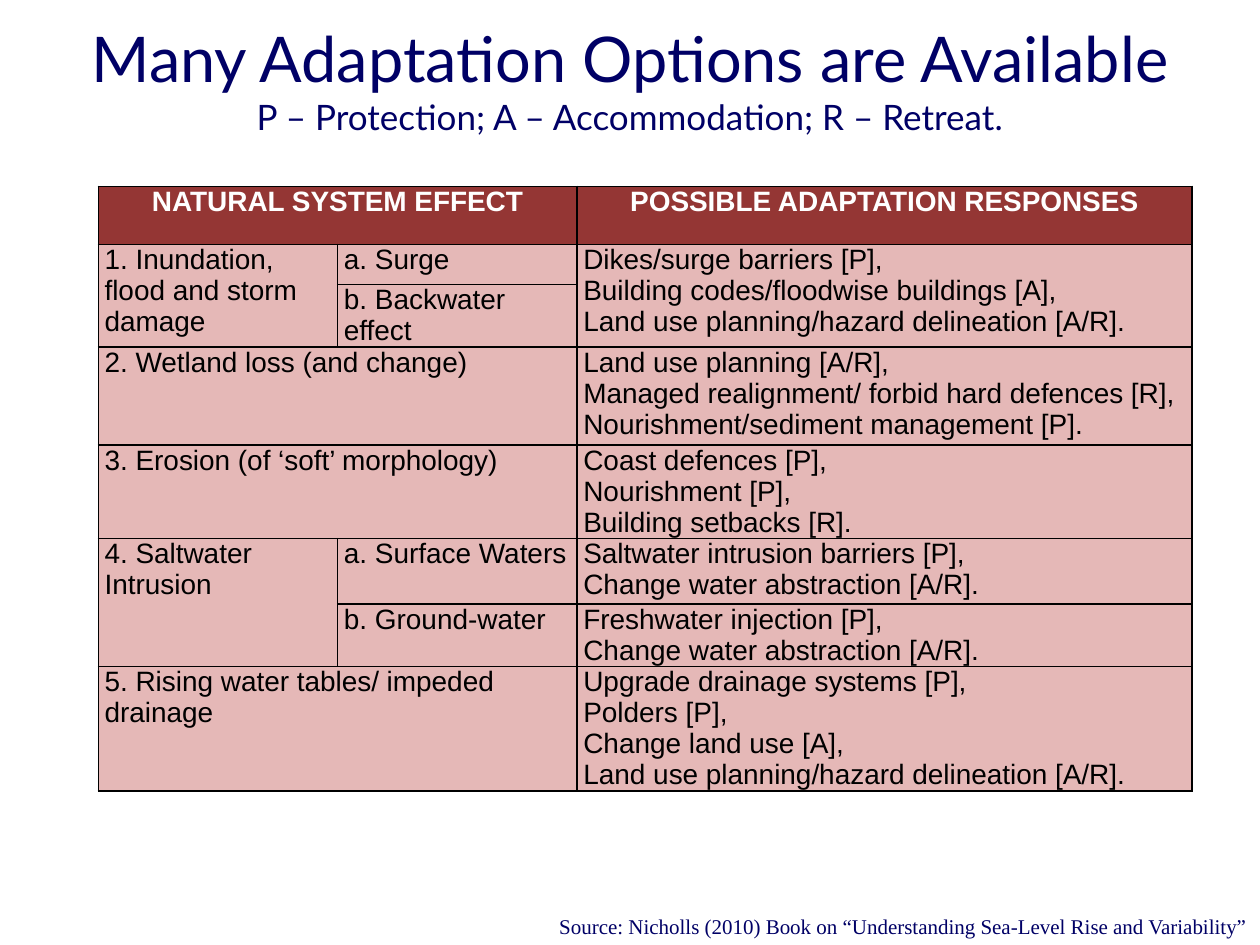
from lxml.etree import SubElement
from pptx import Presentation
from pptx.dml.color import RGBColor
from pptx.enum.text import MSO_ANCHOR, MSO_AUTO_SIZE, PP_ALIGN
from pptx.oxml.ns import qn
from pptx.util import Inches, Pt

COLORS = {"navy": "000066", "header": "943634", "body": "E5B8B7",
          "white": "FFFFFF", "black": "000000"}

COL_WIDTHS = [1.9, 1.9, 4.88]
ROW_HEIGHTS = [0.46, 0.32, 0.39, 0.78, 0.52, 0.52, 0.39, 0.78]

# (row, column, row span, column span, lines)
CELLS = [
    (0, 0, 1, 2, ["NATURAL SYSTEM EFFECT"]),
    (0, 2, 1, 1, ["POSSIBLE ADAPTATION RESPONSES"]),
    (1, 0, 2, 1, ["1. Inundation, flood and storm damage"]),
    (1, 1, 1, 1, ["a. Surge"]),
    (2, 1, 1, 1, ["b. Backwater effect"]),
    (1, 2, 2, 1, ["Dikes/surge barriers [P],",
                  "Building codes/floodwise buildings [A],",
                  "Land use planning/hazard delineation [A/R]."]),
    (3, 0, 1, 2, ["2. Wetland loss (and change)"]),
    (3, 2, 1, 1, ["Land use planning [A/R],",
                  "Managed realignment/ forbid hard defences [R],",
                  "Nourishment/sediment management [P]."]),
    (4, 0, 1, 2, ["3. Erosion (of ‘soft’ morphology)"]),
    (4, 2, 1, 1, ["Coast defences [P],", "Nourishment [P],",
                  "Building setbacks [R]."]),
    (5, 0, 2, 1, ["4. Saltwater Intrusion"]),
    (5, 1, 1, 1, ["a. Surface Waters"]),
    (5, 2, 1, 1, ["Saltwater intrusion barriers [P],",
                  "Change water abstraction [A/R]."]),
    (6, 1, 1, 1, ["b. Ground-water"]),
    (6, 2, 1, 1, ["Freshwater injection [P],",
                  "Change water abstraction [A/R]."]),
    (7, 0, 1, 2, ["5. Rising water tables/ impeded drainage"]),
    (7, 2, 1, 1, ["Upgrade drainage systems [P],", "Polders [P],",
                  "Change land use [A],",
                  "Land use planning/hazard delineation [A/R]."]),
]


def rgb(name):
    return RGBColor.from_string(COLORS[name])


def add_run(p, text, size, font, color, bold=False):
    r = p.add_run()
    r.text = text
    r.font.size, r.font.name, r.font.bold = Pt(size), font, bold
    r.font.color.rgb = rgb(color)


def set_borders(cell, color="black", width=1):
    tc_pr = cell._tc.get_or_add_tcPr()
    for side in ("a:lnL", "a:lnR", "a:lnT", "a:lnB"):
        ln = SubElement(tc_pr, qn(side), w=str(Pt(width)))
        fill = SubElement(ln, qn("a:solidFill"))
        SubElement(fill, qn("a:srgbClr"), val=COLORS[color])


def place(sp, x, y, w, h):
    sp.left, sp.top, sp.width, sp.height = map(Inches, (x, y, w, h))


def build_title(s, x, y, w, h):
    sp = s.shapes.title
    place(sp, x, y, w, h)
    tf = sp.text_frame
    tf.auto_size = MSO_AUTO_SIZE.NONE
    tf.vertical_anchor = MSO_ANCHOR.MIDDLE
    p = tf.paragraphs[0]
    p.alignment = PP_ALIGN.CENTER
    add_run(p, "Many Adaptation Options are Available", 36, "Lato", "navy")
    p.add_line_break()
    add_run(p, "P – Protection; A – Accommodation; R – Retreat.", 20, "Lato", "navy")


def build_table(s, x, y):
    table = s.shapes.add_table(
        len(ROW_HEIGHTS), len(COL_WIDTHS), Inches(x), Inches(y),
        Inches(sum(COL_WIDTHS)), Inches(sum(ROW_HEIGHTS))).table
    for col, width in zip(table.columns, COL_WIDTHS):
        col.width = Inches(width)
    for i, (row, height) in enumerate(zip(table.rows, ROW_HEIGHTS)):
        row.height = Inches(height)
        for cell in row.cells:
            set_borders(cell)
            cell.fill.solid()
            cell.fill.fore_color.rgb = rgb("body" if i else "header")
            cell.margin_left = cell.margin_right = Inches(0.05)
            cell.margin_top = cell.margin_bottom = 0

    for row, col, row_span, col_span, lines in CELLS:
        cell = table.cell(row, col)
        if row_span > 1 or col_span > 1:
            cell.merge(table.cell(row + row_span - 1, col + col_span - 1))
        header = row == 0
        tf = cell.text_frame
        for i, line in enumerate(lines):
            p = tf.add_paragraph() if i else tf.paragraphs[0]
            p.alignment = PP_ALIGN.CENTER if header else PP_ALIGN.LEFT
            add_run(p, line, 16, "Arial", "white" if header else "black", header)


def build_source(s, x, y, w, h):
    sp = s.shapes.add_textbox(*map(Inches, (x, y, w, h)))
    tf = sp.text_frame
    tf.word_wrap = False
    tf.auto_size = MSO_AUTO_SIZE.SHAPE_TO_FIT_TEXT
    p = tf.paragraphs[0]
    p.alignment = PP_ALIGN.RIGHT
    add_run(p, "Source: Nicholls (2010) Book on “Understanding Sea-Level Rise "
               "and Variability”", 12, "Times New Roman", "navy")


def main():
    prs = Presentation()
    prs.slide_width, prs.slide_height = Inches(10), Inches(7.5)
    s = prs.slides.add_slide(prs.slide_layouts[5])
    # Heading, adaptation table, citation
    build_title(s, 0, 0, 10, 1.25)
    build_table(s, 0.78, 1.48)
    build_source(s, 4.31, 7.2, 5.69, 0.3)
    prs.save("out.pptx")


if __name__ == "__main__":
    main()
